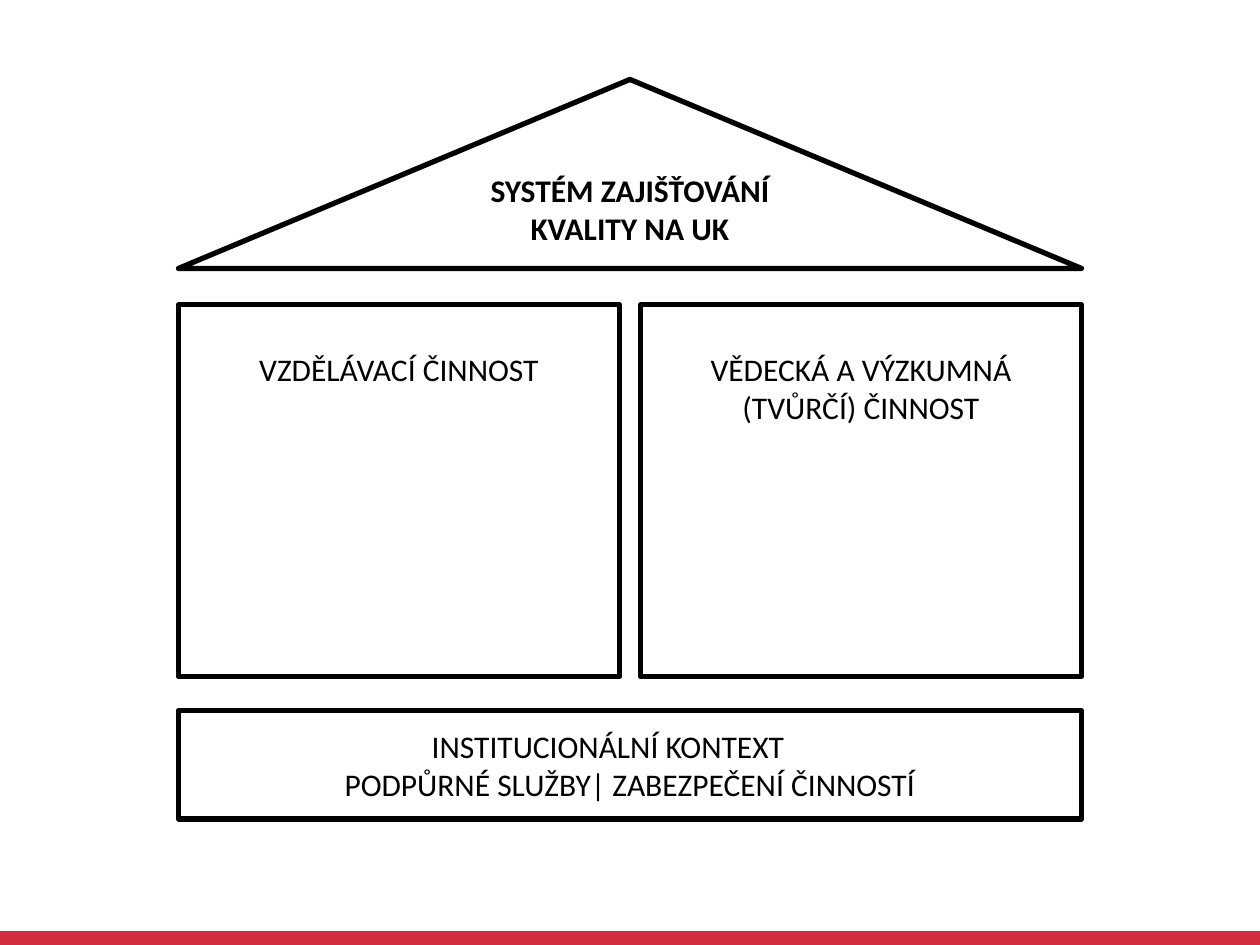
import pptx
import pptx.dml.color
import pptx.enum.shapes
import pptx.enum.text
import pptx.util

Pt = pptx.util.Pt
SHAPES = pptx.enum.shapes.MSO_SHAPE
ALIGN = pptx.enum.text.PP_ALIGN
ANCHOR = pptx.enum.text.MSO_ANCHOR

BLACK = "000000"
RED = "D22D40"
LABEL_FONT = {"name": "Calibri", "size": Pt(18), "bold": False}

HOUSE_LEFT, HOUSE_WIDTH = 102, 516
PILLAR_GAP = 12
CONTEXT_SHIFT = 25


def color(hex_string):
    return pptx.dml.color.RGBColor.from_string(hex_string)


def add_block(slide, kind, box, outline, width, fill=None):
    block = slide.shapes.add_shape(kind, *map(Pt, box))
    block.shadow.inherit = False
    if fill:
        block.fill.solid()
        block.fill.fore_color.rgb = color(fill)
    else:
        block.fill.background()
    block.line.color.rgb = color(outline)
    block.line.width = Pt(width)


def add_label(slide, box, lines, anchor=ANCHOR.TOP, **font_changes):
    label = slide.shapes.add_textbox(*map(Pt, box)).text_frame
    label.word_wrap = True
    label.vertical_anchor = anchor
    label.text = "\n".join(lines)
    for paragraph in label.paragraphs:
        paragraph.alignment = ALIGN.CENTER
        font = paragraph.runs[0].font
        font.color.rgb = color(BLACK)
        for attribute, value in {**LABEL_FONT, **font_changes}.items():
            setattr(font, attribute, value)
    return label


def add_roof(slide, left, top, width, height):
    add_block(slide, SHAPES.ISOSCELES_TRIANGLE, (left, top, width, height), BLACK, 3)
    title_width = 238
    title_left = left + (width - title_width) / 2
    add_label(slide, (title_left, top + 49, title_width, 51),
              ["SYSTÉM ZAJIŠŤOVÁNÍ KVALITY NA UK"], bold=True)


def add_pillars(slide, left, top, width, height):
    activities = ["VZDĚLÁVACÍ ČINNOST", "VĚDECKÁ A VÝZKUMNÁ (TVŮRČÍ) ČINNOST"]
    pillar_width = (width - PILLAR_GAP) / len(activities)
    for index, activity in enumerate(activities):
        pillar_left = left + index * (pillar_width + PILLAR_GAP)
        add_block(slide, SHAPES.RECTANGLE, (pillar_left, top, pillar_width, height), BLACK, 3)
        add_label(slide, (pillar_left, top + 22.4, pillar_width, 51), [activity])


def add_foundation(slide, left, top, width, height):
    """Places the base; its first line sits left of centre, its second on centre."""
    add_block(slide, SHAPES.RECTANGLE, (left, top, width, height), BLACK, 3)
    support = add_label(slide, (left, top + 5.8, width, 51),
                        ["INSTITUCIONÁLNÍ KONTEXT", "PODPŮRNÉ SLUŽBY| ZABEZPEČENÍ ČINNOSTÍ"],
                        anchor=ANCHOR.MIDDLE)
    support.margin_right += Pt(CONTEXT_SHIFT)
    services_format = support.paragraphs[1]._p.get_or_add_pPr()
    services_format.set("marL", str(Pt(CONTEXT_SHIFT)))
    services_format.set("indent", "0")


def add_footer_band(slide, left, top, width, height):
    add_block(slide, SHAPES.RECTANGLE, (left, top, width, height), RED, 2, RED)


def main():
    presentation = pptx.Presentation()
    presentation.slide_width, presentation.slide_height = Pt(720), Pt(540)
    slide = presentation.slides.add_slide(presentation.slide_layouts[6])
    add_roof(slide, HOUSE_LEFT, 45.4, HOUSE_WIDTH, 108)
    add_pillars(slide, HOUSE_LEFT, 174.2, HOUSE_WIDTH, 212.4)
    add_foundation(slide, HOUSE_LEFT, 406, HOUSE_WIDTH, 62)
    add_footer_band(slide, 0, 532.8, 720, 7.2)
    presentation.save("out.pptx")


if __name__ == "__main__":
    main()
